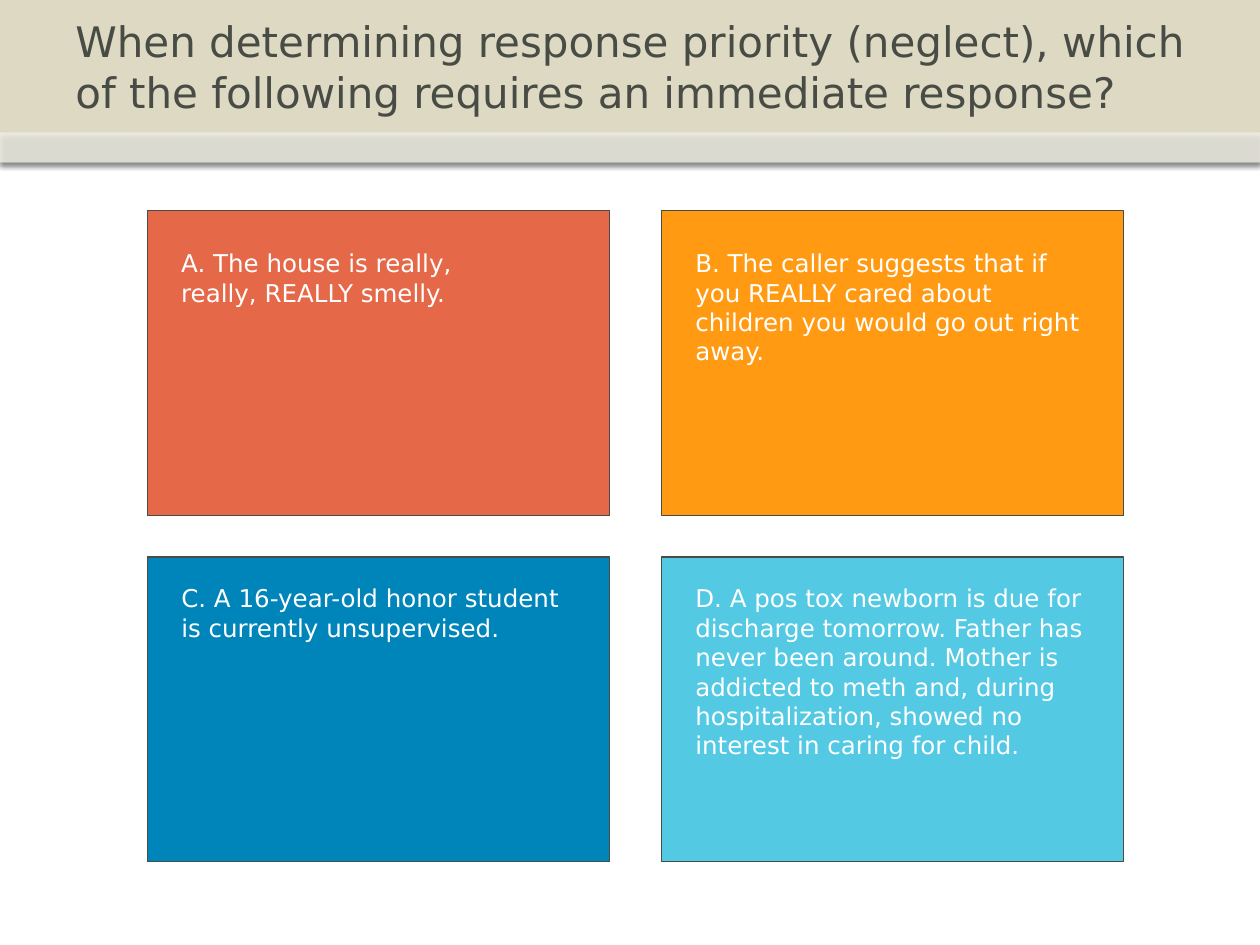
import pptx
import pptx.util
import pptx.dml.color
import pptx.enum.shapes
import pptx.enum.text
import pptx.oxml
import pptx.oxml.ns
from pptx.util import Inches

FONT = "DejaVu Sans"
INK = "484C45"
WHITE = "FFFFFF"


def color(hex_string):
    return pptx.dml.color.RGBColor.from_string(hex_string)


def add_rectangle(page, box, fill, line=None):
    shape = page.shapes.add_shape(pptx.enum.shapes.MSO_SHAPE.RECTANGLE, *map(Inches, box))
    shape.shadow.inherit = False
    shape.fill.solid()
    shape.fill.fore_color.rgb = color(fill)
    if line:
        shape.line.color.rgb = color(line)
        shape.line.width = pptx.util.Pt(0.75)
    else:
        shape.line.fill.background()
    return shape


def add_text(page, box, text, size, ink, anchor="TOP", grow=False):
    text_box = page.shapes.add_textbox(*map(Inches, box))
    frame = text_box.text_frame
    frame.word_wrap = True
    frame.vertical_anchor = pptx.enum.text.MSO_ANCHOR[anchor]
    sizing = "SHAPE_TO_FIT_TEXT" if grow else "NONE"
    frame.auto_size = pptx.enum.text.MSO_AUTO_SIZE[sizing]
    span = frame.paragraphs[0].add_run()
    span.text = text
    span.font.name = FONT
    span.font.size = pptx.util.Pt(size)
    span.font.color.rgb = color(ink)


def add_shadow(shape):
    """Cast a soft shadow straight down."""
    effects = shape._element.spPr.find(pptx.oxml.ns.qn("a:effectLst"))
    effects.append(pptx.oxml.parse_xml(
        f'<a:outerShdw {pptx.oxml.ns.nsdecls("a")} blurRad="{pptx.util.Pt(3.1)}" '
        f'dist="{pptx.util.Pt(1.8)}" dir="5400000" rotWithShape="0">'
        '<a:srgbClr val="000000"><a:alpha val="35000"/></a:srgbClr></a:outerShdw>'))


def set_opacity(shape, percent):
    tint = shape._element.spPr.find(".//" + pptx.oxml.ns.qn("a:srgbClr"))
    tint.append(pptx.oxml.parse_xml(
        f'<a:alpha {pptx.oxml.ns.nsdecls("a")} val="{percent * 1000}"/>'))


def add_header(page, box, title):
    left, top, width, height = box
    strip_height = 0.24
    title_height = height - strip_height

    # Sand band with a translucent strip along its foot
    band = add_rectangle(page, box, "DDD9C3")
    strip = add_rectangle(page, (left, top + title_height, width, strip_height), WHITE)
    set_opacity(strip, 53)
    for shape in (band, strip):
        add_shadow(shape)

    add_text(page, (left + 0.5, top, 9.33, title_height), title, 24, INK, anchor="MIDDLE")


def add_answers(page, box, answers):
    left, top, width, height = box
    card_width, card_height = 3.67, 2.42
    column_step = width - card_width
    row_step = height - card_height
    row_insets = (0.25, 0.16)

    for index, (fill, text_width, text_height, text) in enumerate(answers):
        row, column = divmod(index, 2)
        x = left + column * column_step
        y = top + row * row_step
        add_rectangle(page, (x, y, card_width, card_height), fill, line=INK)
        add_text(page, (x + 0.17, y + row_insets[row], text_width, text_height),
                 text, 14, WHITE, grow=True)


def main():
    deck = pptx.Presentation()
    deck.slide_width, deck.slide_height = Inches(10), Inches(7.5)
    page = deck.slides.add_slide(deck.slide_layouts[6])

    add_header(page, (0, 0, 10, 1.29),
               "When determining response priority (neglect), which of the following "
               "requires an immediate response?")

    # Fill, text width, text height, wording
    answers = [
        ("E56849", 3, 0.57, "A. The house is really, really, REALLY smelly."),
        ("FF9A12", 3.33, 1.04, "B. The caller suggests that if you REALLY cared about "
                               "children you would go out right away."),
        ("0085BA", 3.25, 0.57, "C. A 16-year-old honor student is currently unsupervised."),
        ("53C9E4", 3.58, 1.51, "D. A pos tox newborn is due for discharge tomorrow. Father "
                               "has never been around. Mother is addicted to meth and, during "
                               "hospitalization, showed no interest in caring for child."),
    ]
    add_answers(page, (1.17, 1.67, 7.75, 5.17), answers)

    deck.save("out.pptx")


if __name__ == "__main__":
    main()
